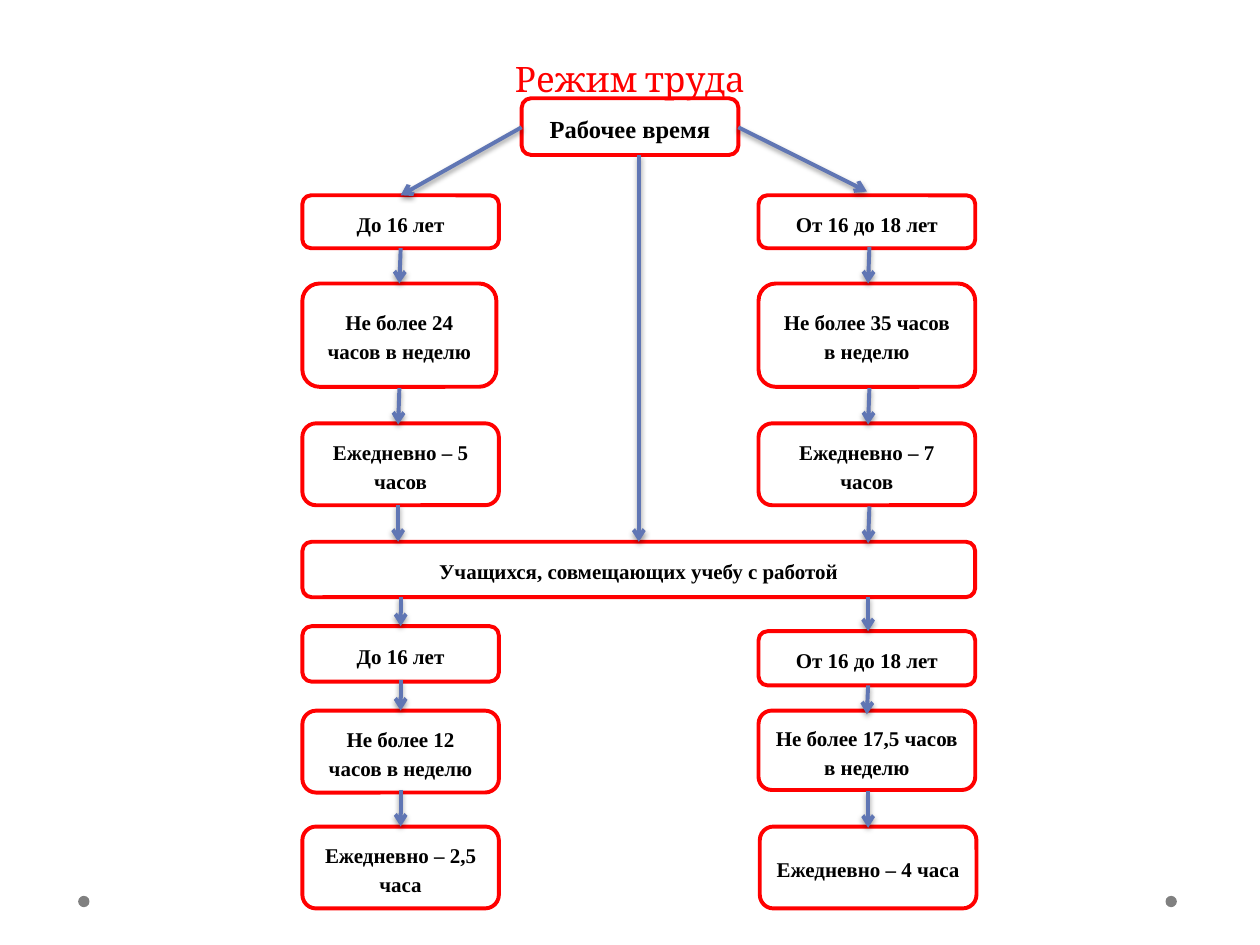
"""Builds the flowchart slide on working hours for minors."""
from lxml import etree
from pptx import Presentation
from pptx.dml.color import RGBColor
from pptx.enum import shapes, text
from pptx.util import Inches, Pt

SHADOW = (
    '<a:effectLst xmlns:a="http://schemas.openxmlformats.org/drawingml/2006/main">'
    '<a:outerShdw blurRad="39370" dist="20320" dir="5400000" rotWithShape="0">'
    '<a:srgbClr val="000000"><a:alpha val="38000"/></a:srgbClr>'
    '</a:outerShdw></a:effectLst>'
)
DRAWING = "{http://schemas.openxmlformats.org/drawingml/2006/main}"


def color(value):
    return RGBColor.from_string(value)


def write(shape, words, size=12, font="Times New Roman", fill="000000", bold=True,
          anchor=text.MSO_ANCHOR.MIDDLE, line_spacing=1.15, space_after=Pt(10)):
    frame = shape.text_frame
    frame.word_wrap = True
    frame.auto_size = text.MSO_AUTO_SIZE.NONE
    frame.vertical_anchor = anchor
    paragraph = frame.paragraphs[0]
    paragraph.alignment = text.PP_ALIGN.CENTER
    paragraph.line_spacing = line_spacing
    paragraph.space_before = Pt(0)
    paragraph.space_after = space_after
    run = paragraph.add_run()
    run.text = words
    run.font.size = Pt(size)
    run.font.name = font
    run.font.bold = bold
    run.font.color.rgb = color(fill)


presentation = Presentation()
presentation.slide_width = Inches(10)
presentation.slide_height = Inches(7.5)
slide = presentation.slides.add_slide(presentation.slide_layouts[5])

for left in (9.25, 0.62):
    dot = slide.shapes.add_shape(shapes.MSO_SHAPE.OVAL, Inches(left), Inches(7.11),
                                 Inches(0.09), Inches(0.09))
    dot.shadow.inherit = False
    dot.fill.solid()
    dot.fill.fore_color.rgb = color("808080")
    dot.line.fill.background()

title = slide.shapes.title
title.left, title.top = Inches(0.5), Inches(-0.11)
title.width, title.height = Inches(9), Inches(0.76)
title.text_frame.margin_top = Inches(0.09)
write(title, "Режим труда", size=20, font="Cambria", fill="FF0000", bold=False,
      anchor=text.MSO_ANCHOR.TOP, line_spacing=Pt(58), space_after=Pt(0))

boxes = [
    ("Рабочее время", 4.14, 0.78, 1.72, 0.45, 14),
    ("До 16 лет", 2.4, 1.55, 1.56, 0.42, 12),
    ("От 16 до 18 лет", 6.02, 1.55, 1.72, 0.42, 12),
    ("Не более 24 часов в неделю", 2.4, 2.25, 1.54, 0.82, 12),
    ("Не более 35 часов в неделю", 6.02, 2.25, 1.72, 0.82, 12),
    ("Ежедневно – 5 часов", 2.4, 3.36, 1.56, 0.65, 12),
    ("Ежедневно – 7 часов", 6.02, 3.36, 1.72, 0.65, 12),
    ("Учащихся, совмещающих учебу с работой", 2.4, 4.3, 5.34, 0.44, 12),
    ("До 16 лет", 2.4, 4.97, 1.56, 0.44, 12),
    ("От 16 до 18 лет", 6.02, 5.01, 1.72, 0.43, 12),
    ("Не более 12 часов в неделю", 2.4, 5.64, 1.56, 0.65, 12),
    ("Не более 17,5 часов в неделю", 6.02, 5.64, 1.72, 0.63, 12),
    ("Ежедневно – 2,5 часа", 2.4, 6.56, 1.56, 0.65, 12),
    ("Ежедневно – 4 часа", 6.03, 6.56, 1.72, 0.65, 12),
]
for words, left, top, width, height, size in boxes:
    box = slide.shapes.add_shape(shapes.MSO_SHAPE.ROUNDED_RECTANGLE, Inches(left),
                                 Inches(top), Inches(width), Inches(height))
    box.shadow.inherit = False
    box.fill.background()
    box.line.color.rgb = color("FF0000")
    box.line.width = Pt(2.25)
    write(box, words, size=size)

arrows = [
    (5.07, 1.23, 5.07, 4.3),
    (4.14, 1.01, 3.18, 1.55),
    (5.86, 1.01, 6.88, 1.52),
    (3.18, 1.97, 3.17, 2.25),
    (3.17, 3.08, 3.16, 3.37),
    (3.16, 4.01, 3.16, 4.3),
    (3.18, 4.74, 3.18, 4.97),
    (3.18, 5.4, 3.18, 5.64),
    (3.18, 6.27, 3.18, 6.56),
    (6.9, 1.96, 6.89, 2.25),
    (6.9, 3.08, 6.89, 3.37),
    (6.9, 4.02, 6.89, 4.31),
    (6.89, 4.74, 6.89, 5.01),
    (6.89, 5.44, 6.88, 5.67),
    (6.89, 6.28, 6.89, 6.57),
]
for ends in arrows:
    arrow = slide.shapes.add_connector(shapes.MSO_CONNECTOR.STRAIGHT,
                                       *[Inches(value) for value in ends])
    arrow.line.color.rgb = color("6076B4")
    arrow.line.width = Pt(2.25)
    outline = arrow.line._get_or_add_ln()
    etree.SubElement(outline, DRAWING + "tailEnd", type="arrow")
    outline.getparent().append(etree.fromstring(SHADOW))

presentation.save("out.pptx")
